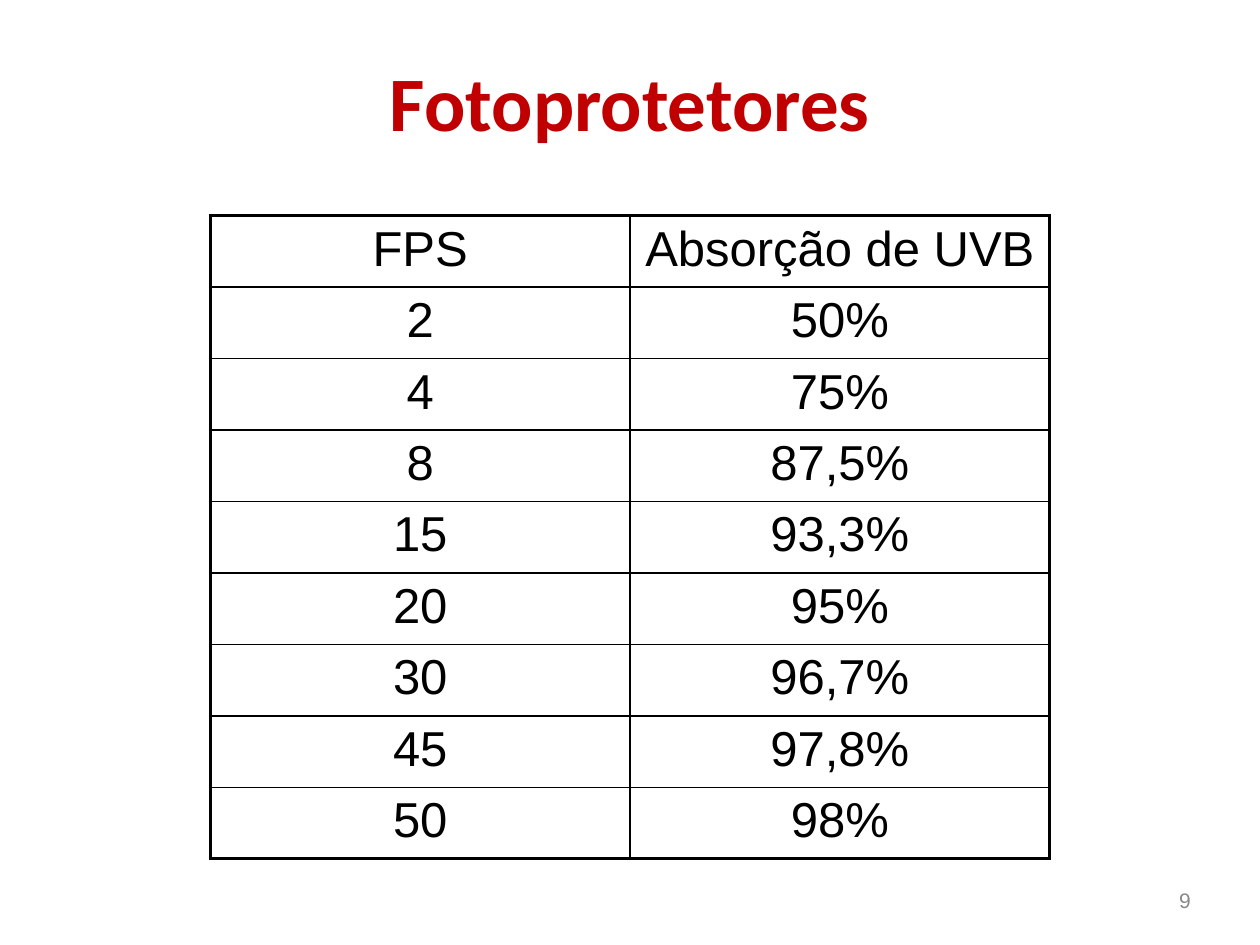
from dataclasses import dataclass

from lxml.etree import SubElement
from pptx import Presentation
from pptx.dml.color import RGBColor
from pptx.enum.text import MSO_ANCHOR as Anchor, PP_ALIGN as Align
from pptx.oxml.ns import qn
from pptx.util import Inches, Pt

INSET = Inches(0.05)
BLACK = "000000"
INNER_LINE, OUTER_LINE = Pt(1), Pt(2.25)


@dataclass(frozen=True)
class Protection:
    factor: str
    absorption: str


ROWS = [
    Protection("FPS", "Absorção de UVB"),
    Protection("2", "50%"),
    Protection("4", "75%"),
    Protection("8", "87,5%"),
    Protection("15", "93,3%"),
    Protection("20", "95%"),
    Protection("30", "96,7%"),
    Protection("45", "97,8%"),
    Protection("50", "98%"),
]


def color(value: str) -> RGBColor:
    return RGBColor.from_string(value)


def write(frame, text: str, *, size: float, fill: str = BLACK,
          font: str = "Arial", bold: bool = False, align=Align.CENTER) -> None:
    frame.word_wrap = True
    para = frame.paragraphs[0]
    para.alignment = align
    span = para.add_run()
    span.text = text
    span.font.name = font
    span.font.size = Pt(size)
    span.font.bold = bold
    span.font.color.rgb = color(fill)


def add_text(page, text: str, left: float, top: float, width: float,
             height: float, **style) -> None:
    box = page.shapes.add_textbox(
        Inches(left), Inches(top), Inches(width), Inches(height))
    frame = box.text_frame
    frame.margin_left = frame.margin_right = INSET
    frame.margin_top = frame.margin_bottom = INSET
    frame.vertical_anchor = Anchor.MIDDLE
    write(frame, text, **style)


def add_borders(cell, outer: dict[str, bool]) -> None:
    properties = cell._tc.get_or_add_tcPr()
    for side, is_outer in outer.items():
        width = OUTER_LINE if is_outer else INNER_LINE
        line = SubElement(properties, qn(f"a:ln{side}"), w=str(int(width)))
        fill = SubElement(line, qn("a:solidFill"))
        SubElement(fill, qn("a:srgbClr"), val=BLACK)


def add_protection_table(page, rows: list[Protection]) -> None:
    row_height, column_width = Inches(5.1 / len(rows)), Inches(3.33)
    table = page.shapes.add_table(
        len(rows), 2, Inches(1.67), Inches(1.71),
        column_width * 2, row_height * len(rows)).table
    table.first_row = table.horz_banding = False
    for column in table.columns:
        column.width = column_width
    for row_index, entry in enumerate(rows):
        table.rows[row_index].height = row_height
        for column_index, text in enumerate((entry.factor, entry.absorption)):
            cell = table.cell(row_index, column_index)
            cell.margin_left = cell.margin_right = INSET
            cell.margin_top = cell.margin_bottom = INSET
            write(cell.text_frame, text, size=28)
            add_borders(cell, {
                "L": column_index == 0,
                "R": column_index == 1,
                "T": row_index == 0,
                "B": row_index == len(rows) - 1,
            })
            cell.fill.background()


def main() -> None:
    deck = Presentation()
    deck.slide_width, deck.slide_height = Inches(10), Inches(7.5)
    page = deck.slides.add_slide(deck.slide_layouts[6])
    add_text(page, "Fotoprotetores", 0.5, -0.03, 9, 1.65,
             size=44, fill="C00000", font="Calibri", bold=True)
    add_text(page, "9", 7.17, 7, 2.33, 0.29,
             size=12, fill="888888", align=Align.RIGHT)
    add_protection_table(page, ROWS)
    deck.save("out.pptx")


if __name__ == "__main__":
    main()
